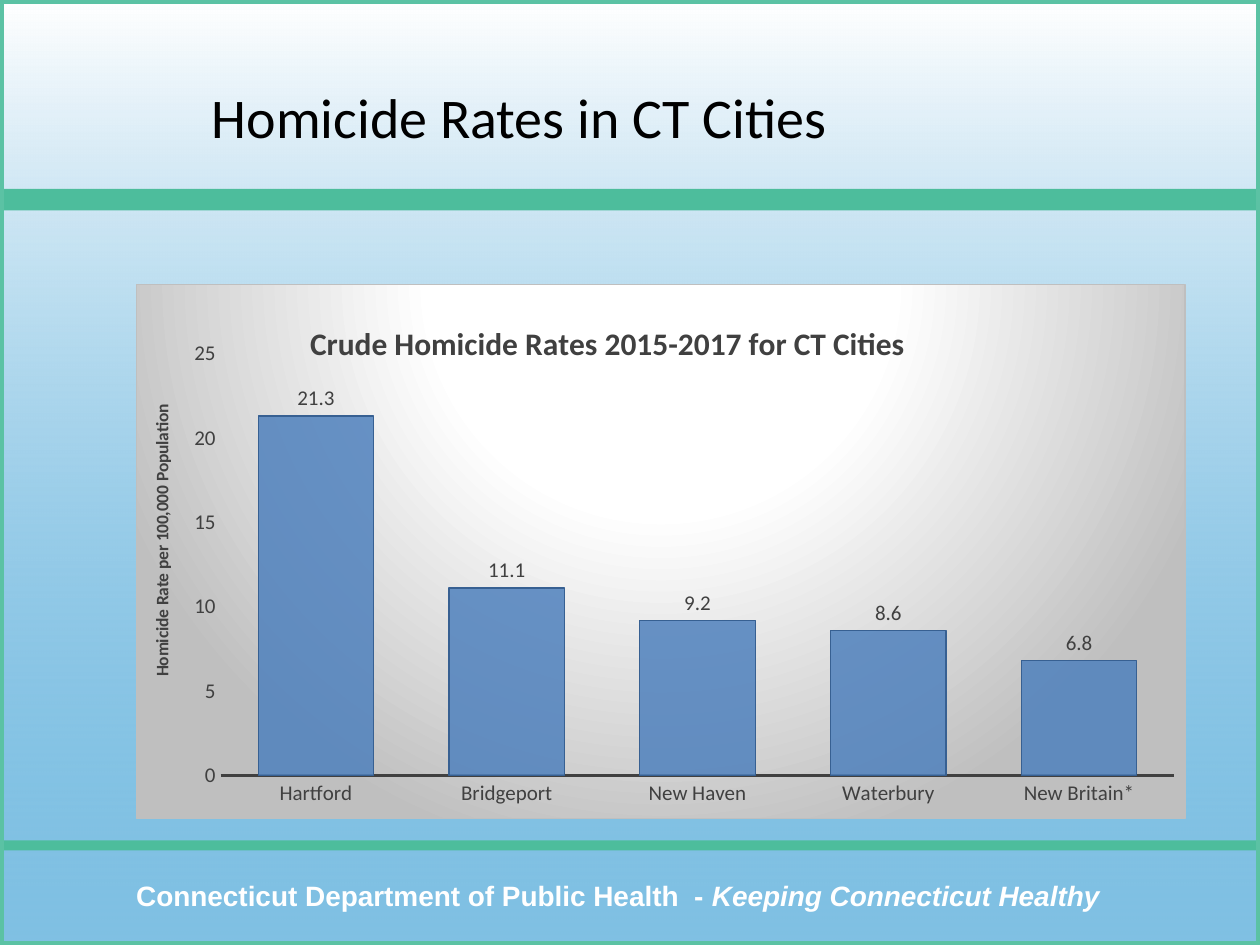
from pptx import Presentation
from pptx.chart.data import CategoryChartData
from pptx.dml.color import RGBColor
from pptx.enum.chart import XL_CHART_TYPE, XL_LABEL_POSITION, XL_TICK_MARK
from pptx.enum.shapes import MSO_SHAPE
from pptx.enum.text import MSO_ANCHOR, PP_ALIGN
from pptx.oxml import parse_xml
from pptx.oxml.ns import nsdecls, qn
from pptx.util import Inches, Pt

BLUE = RGBColor(0x00, 0x82, 0xC8)
GREEN = RGBColor(0x4D, 0xBD, 0x9C)
FRAME_GREEN = RGBColor(0x5B, 0xC2, 0xA4)
WHITE = RGBColor(0xFF, 0xFF, 0xFF)
BLACK = RGBColor(0x00, 0x00, 0x00)
GRAY = RGBColor(0xBF, 0xBF, 0xBF)
DARK = RGBColor(0x40, 0x40, 0x40)
BAR_FILL = RGBColor(0x4F, 0x81, 0xBD)
BAR_LINE = RGBColor(0x37, 0x60, 0x92)


def gradient(stops, direction):
    """Return a gradFill element; stops are (percent, colour, opacity percent)."""
    gs = "".join(
        f'<a:gs pos="{pos * 1000}"><a:srgbClr val="{color}">'
        f'<a:alpha val="{opacity * 1000}"/></a:srgbClr></a:gs>'
        for pos, color, opacity in stops)
    return parse_xml(f'<a:gradFill {nsdecls("a")} rotWithShape="1">'
                     f'<a:gsLst>{gs}</a:gsLst>{direction}</a:gradFill>')


def set_layout(parent, index, **values):
    """Give a chart part a manual layout in fractions of the chart."""
    for old in parent.findall(qn("c:layout")):
        parent.remove(old)
    target = '<c:layoutTarget val="inner"/>' if "w" in values else ""
    modes = '<c:xMode val="edge"/><c:yMode val="edge"/>'
    sizes = "".join(f'<c:{k} val="{v}"/>' for k, v in values.items())
    parent.insert(index, parse_xml(
        f'<c:layout {nsdecls("c")}><c:manualLayout>{target}{modes}{sizes}'
        '</c:manualLayout></c:layout>'))


prs = Presentation()
prs.slide_width, prs.slide_height = Inches(10), Inches(7.5)
s = prs.slides.add_slide(prs.slide_layouts[5])

# Backdrop, green bands and frame
for top, height, color in [(0, 7.5, None), (6.67, 0.08, GREEN), (1.5, 0.17, GREEN)]:
    sp = s.shapes.add_shape(MSO_SHAPE.RECTANGLE, 0, Inches(top), Inches(10), Inches(height))
    sp.shadow.inherit = False
    sp.line.fill.background()
    if color is not None:
        sp.fill.solid()
        sp.fill.fore_color.rgb = color
    else:
        sp.fill.background()
        no_fill = sp.element.spPr.find(qn("a:noFill"))
        no_fill.getparent().replace(no_fill, gradient(
            [(0, BLUE, 50), (100, WHITE, 100)], '<a:lin ang="16200000" scaled="1"/>'))

frame = s.shapes.add_shape(MSO_SHAPE.RECTANGLE, 0, 0, Inches(10), Inches(7.5))
frame.shadow.inherit = False
frame.fill.background()
frame.line.color.rgb = FRAME_GREEN
frame.line.width = Pt(4.5)

# Footer
tf = s.shapes.add_textbox(Inches(0.49), Inches(6.92), Inches(8.83), Inches(0.37)).text_frame
tf.word_wrap = True
p = tf.paragraphs[0]
p.alignment = PP_ALIGN.CENTER
for text, italic in [("Connecticut Department of Public Health  - ", False),
                     ("Keeping Connecticut Healthy", True)]:
    r = p.add_run()
    r.text = text
    r.font.name = "Arial"
    r.font.size = Pt(16)
    r.font.bold = True
    r.font.italic = italic
    r.font.color.rgb = WHITE

# Title, brought in front of the backdrop
title = s.shapes.title
s.shapes.element.append(title.element)
title.left, title.top = Inches(1.58), Inches(0.3)
title.width, title.height = Inches(7.92), Inches(1.25)
tf = title.text_frame
tf.vertical_anchor = MSO_ANCHOR.MIDDLE
p = tf.paragraphs[0]
p.alignment = PP_ALIGN.LEFT
r = p.add_run()
r.text = "Homicide Rates in CT Cities"
r.font.name = "Calibri"
r.font.size = Pt(32)
r.font.color.rgb = BLACK

# Chart
data = CategoryChartData(number_format="0.0")
data.categories = ["Hartford", "Bridgeport", "New Haven", "Waterbury", "New Britain*"]
data.add_series("Series 1", [21.3, 11.1, 9.2, 8.6, 6.8])
chart = s.shapes.add_chart(XL_CHART_TYPE.COLUMN_CLUSTERED, Inches(1.08), Inches(2.25),
                           Inches(8.33), Inches(4.25), data).chart
chart.has_legend = False
chart.font.name = "Calibri"
chart.font.size = Pt(10)
chart.font.color.rgb = BLACK

cat_axis, val_axis = chart.category_axis, chart.value_axis
for axis in (cat_axis, val_axis):
    axis.has_major_gridlines = False
    axis.major_tick_mark = axis.minor_tick_mark = XL_TICK_MARK.NONE
    axis.tick_labels.font.name = "Calibri"
    axis.tick_labels.font.size = Pt(12)
    axis.tick_labels.font.color.rgb = DARK
cat_axis.format.line.color.rgb = DARK
cat_axis.format.line.width = Pt(1.5)
val_axis.format.line.fill.background()
val_axis.minimum_scale, val_axis.maximum_scale, val_axis.major_unit = 0, 25, 5
val_axis.tick_labels.number_format = "0"
val_axis.tick_labels.number_format_is_linked = False

for heading, text, size, x, y in [
        (chart.chart_title, "Crude Homicide Rates 2015-2017 for CT Cities", 18, 0.16, 0.06),
        (val_axis.axis_title, "Homicide Rate per 100,000 Population", 10, 0.01, 0.22)]:
    r = heading.text_frame.paragraphs[0].add_run()
    r.text = text
    r.font.name = "Calibri"
    r.font.size = Pt(size)
    r.font.bold = True
    r.font.color.rgb = DARK
    set_layout(heading.element, 1, x=x, y=y)
body = val_axis.axis_title.element.find(".//" + qn("a:bodyPr"))
body.set("rot", "-5400000")
body.set("vert", "horz")

plot = chart.plots[0]
plot.gap_width = 65
plot.vary_by_categories = False
bars = plot.series[0]
bars.format.fill.solid()
bars.format.fill.fore_color.rgb = BAR_FILL
bars.format.line.color.rgb = BAR_LINE
bars.format.line.width = Pt(0.75)
labels = bars.data_labels
labels.show_value = True
labels.position = XL_LABEL_POSITION.OUTSIDE_END
labels.font.name = "Calibri"
labels.font.size = Pt(12)
labels.font.color.rgb = DARK

chart_xml = chart.element.find(qn("c:chart"))
bar_color = chart_xml.find(
    f'.//{qn("c:ser")}/{qn("c:spPr")}/{qn("a:solidFill")}/{qn("a:srgbClr")}')
bar_color.append(parse_xml(f'<a:alpha {nsdecls("a")} val="85000"/>'))
set_layout(chart_xml.find(qn("c:plotArea")), 0, x=0.08, y=0.13, w=0.91, h=0.79)
chart_area = parse_xml(
    f'<c:spPr {nsdecls("c", "a")}><a:ln w="{Pt(0.75)}"><a:solidFill>'
    f'<a:srgbClr val="{GRAY}"/></a:solidFill></a:ln></c:spPr>')
chart_area.insert(0, gradient(
    [(0, WHITE, 100), (39, WHITE, 100), (100, GRAY, 100)],
    '<a:path path="circle"><a:fillToRect l="50000" t="-80000" r="50000" b="180000"/></a:path>'))
chart_xml.addnext(chart_area)

prs.save("out.pptx")
